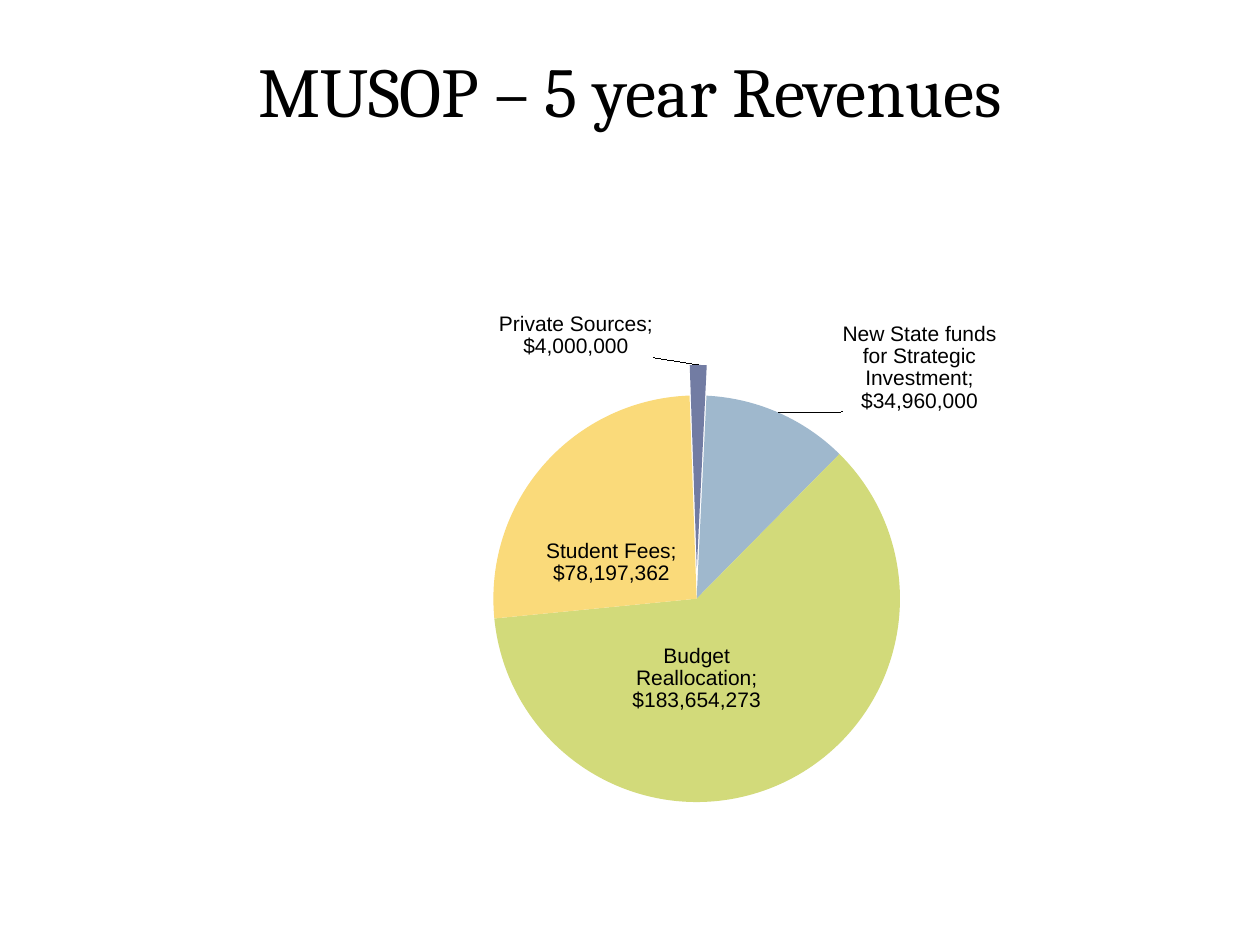
from lxml import etree
from pptx import Presentation
from pptx.chart import data
from pptx.dml import color
from pptx.enum import chart as ch, text
from pptx.oxml import ns, parse_xml
from pptx.util import Pt


def rgb(value):
    return color.RGBColor.from_string(value)


def manual_layout(target, **fractions):
    values = "".join(f'<c:{key} val="{val}"/>' for key, val in fractions.items())
    return parse_xml(
        f'<c:layout {ns.nsdecls("c")}><c:manualLayout>{target}{values}</c:manualLayout></c:layout>'
    )


prs = Presentation()
prs.slide_width, prs.slide_height = Pt(720), Pt(540)
slide = prs.slides.add_slide(prs.slide_layouts[5])

title = slide.shapes.title
title.left, title.top, title.width, title.height = Pt(36), Pt(6), Pt(648), Pt(90)
title.text_frame.text = "MUSOP – 5 year Revenues"
title.text_frame.vertical_anchor = text.MSO_ANCHOR.MIDDLE
heading = title.text_frame.paragraphs[0]
heading.alignment = text.PP_ALIGN.CENTER
heading.font.name, heading.font.size = "Cambria", Pt(40)
heading.font.color.rgb = rgb("000000")

OUT, CENTER = ch.XL_LABEL_POSITION.OUTSIDE_END, ch.XL_LABEL_POSITION.CENTER
sources = [
    ("Private Sources", 4000000, "727CA3", OUT, -0.14, 0),
    ("New State funds for Strategic Investment", 34960000, "9FB8CD", OUT, 0.07, 0.01),
    ("Budget Reallocation", 183654273, "D2DA7A", CENTER, -0.05, -0.02),
    ("Student Fees", 78197362, "FADA7A", CENTER, -0.01, 0.05),
]
dollars = '"$"#,##0'
revenue_data = data.CategoryChartData(number_format=dollars)
revenue_data.categories = [source[0] for source in sources]
revenue_data.add_series("Series 1", [source[1] for source in sources])
revenues = slide.shapes.add_chart(
    ch.XL_CHART_TYPE.PIE, Pt(143.28), Pt(159.12), Pt(499.68), Pt(352.08), revenue_data
).chart
revenues.has_legend = False
revenues.has_title = False
revenues.font.name, revenues.font.size = "Arial", Pt(10)
revenues.font.color.rgb = rgb("000000")

pie = revenues.plots[0]
pie.vary_by_categories = True
series = pie.series[0]
labels = series.data_labels
labels.show_value = labels.show_category_name = True
labels.show_percentage = labels.show_legend_key = False
labels.number_format, labels.number_format_is_linked = dollars, False
labels.font.name, labels.font.size = "Arial", Pt(12)
labels.font.color.rgb = rgb("000000")

for index, (name, amount, fill, position, dx, dy) in enumerate(sources):
    point = series.points[index]
    point.format.fill.solid()
    point.format.fill.fore_color.rgb = rgb(fill)
    label = point.data_label
    label.position = position
    label.font.name, label.font.size = "Arial", Pt(12)
    label.font.color.rgb = rgb("000000")

plot_xml = revenues.element.find(".//" + ns.qn("c:pieChart"))
for label_xml, (*_, dx, dy) in zip(plot_xml.iter(ns.qn("c:dLbl")), sources):
    label_xml.insert(1, manual_layout("", x=dx, y=dy))
    label_xml.find(ns.qn("c:showCatName")).set("val", "1")
    etree.SubElement(label_xml, ns.qn("c:separator")).text = "; "
labels_xml = plot_xml.find(".//" + ns.qn("c:dLbls"))
leader = labels_xml.find(ns.qn("c:showLeaderLines"))
if leader is None:
    leader = etree.SubElement(labels_xml, ns.qn("c:showLeaderLines"))
leader.set("val", "1")
separator = etree.Element(ns.qn("c:separator"))
separator.text = "; "
leader.addprevious(separator)

private_slice = plot_xml.find(".//" + ns.qn("c:dPt"))
explosion = etree.Element(ns.qn("c:explosion"), val="15")
private_slice.find(ns.qn("c:spPr")).addprevious(explosion)
start = plot_xml.find(ns.qn("c:firstSliceAng"))
if start is None:
    start = etree.SubElement(plot_xml, ns.qn("c:firstSliceAng"))
start.set("val", "358")

plot_area = plot_xml.getparent()
for old_layout in plot_area.findall(ns.qn("c:layout")):
    plot_area.remove(old_layout)
inner = '<c:layoutTarget val="inner"/><c:xMode val="edge"/><c:yMode val="edge"/>'
plot_area.insert(0, manual_layout(inner, x=0.27, y=0.19, w=0.48, h=0.66))

prs.save("out.pptx")
